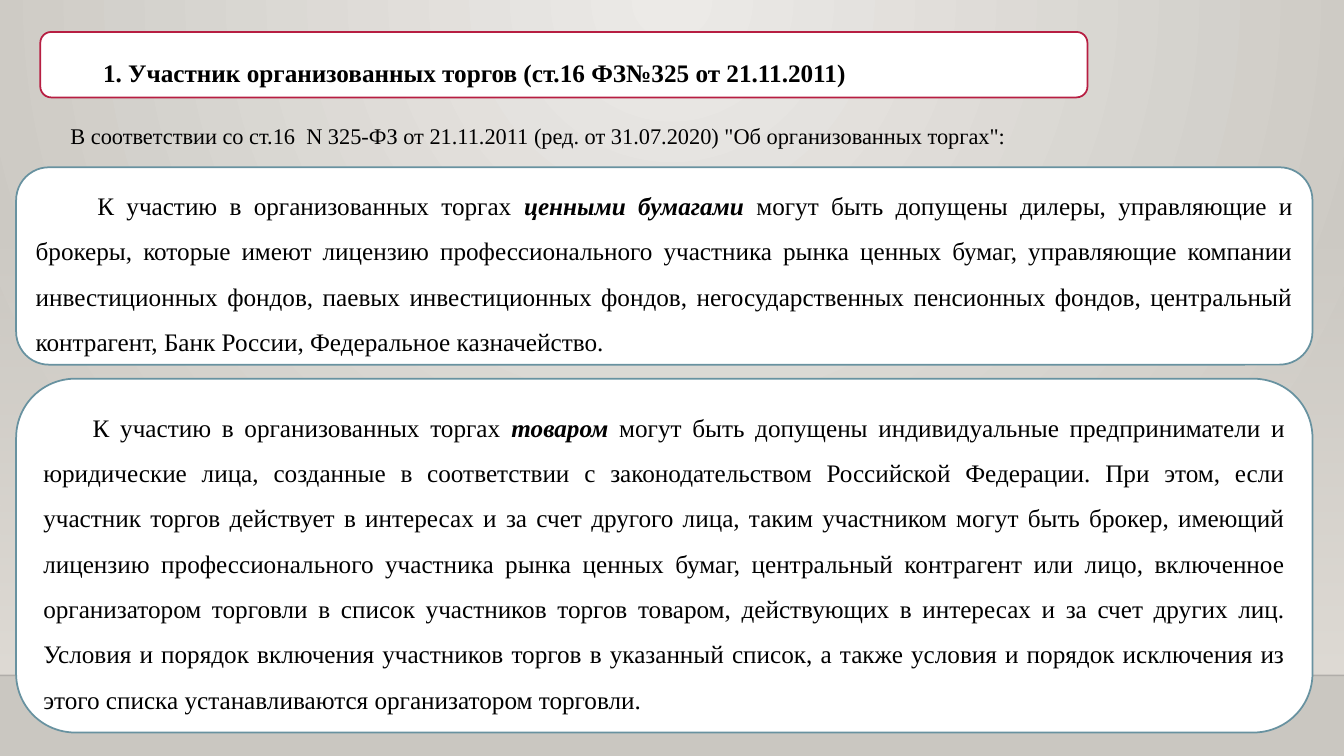
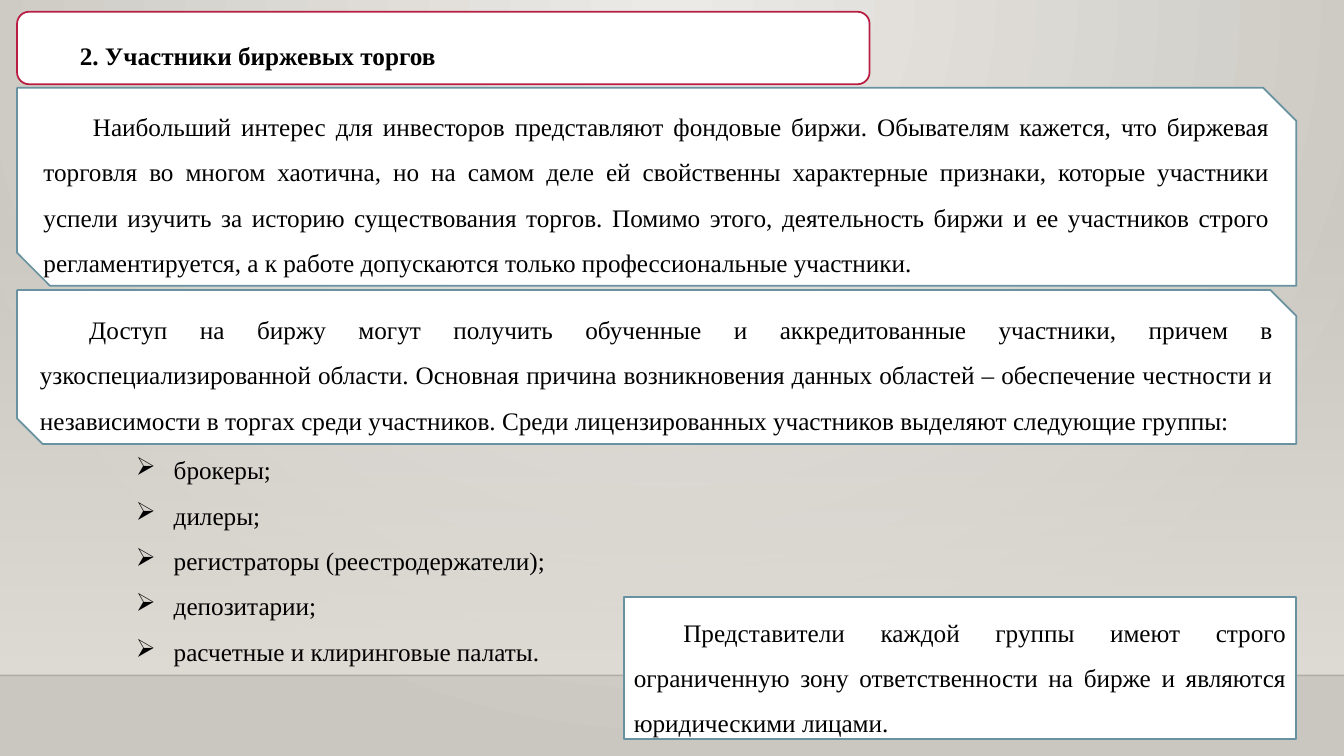
from dataclasses import dataclass

from lxml import etree
from pptx import Presentation
from pptx.dml.color import RGBColor
from pptx.enum import shapes, text
from pptx.oxml import ns, parse_xml
from pptx.util import Pt

COLORS = {
    "text": "000000",
    "white": "FFFFFF",
    "title_line": "B71E42",
    "box_line": "6892A0",
    "bg_light": "ECEAE7",
    "bg_dark": "CAC7C1",
    "band": "DFDBD5",
    "floor_line": "000001",
}
FONT = "Times New Roman"
WIDTH, HEIGHT = 960, 540
BAND_TOP, FLOOR = 159, 482.4
FIRST_INDENT, BULLET_INDENT = 35.3, 27
NSDECLS = ns.nsdecls("a", "p")
KIND = shapes.MSO_SHAPE
ALIGN = text.PP_ALIGN
ANCHOR = text.MSO_ANCHOR


@dataclass(frozen=True)
class Rect:
    left: float
    top: float
    width: float
    height: float

    def points(self) -> list:
        return [Pt(v) for v in (self.left, self.top, self.width, self.height)]


@dataclass(frozen=True)
class Run:
    text: str
    strong: bool = False


@dataclass(frozen=True)
class Box:
    rect: Rect
    kind: KIND
    runs: tuple[Run, ...]
    anchor: ANCHOR = ANCHOR.MIDDLE


@dataclass(frozen=True)
class Title:
    rect: Rect
    text: str
    align: ALIGN


def rgb(name: str) -> RGBColor:
    return RGBColor.from_string(COLORS[name])


def add_run(p, words: str, size: float = 18, bold: bool = False, italic: bool = False) -> None:
    r = p.add_run()
    r.text = words
    r.font.name = FONT
    r.font.size = Pt(size)
    r.font.bold = bold
    r.font.italic = italic
    r.font.color.rgb = rgb("text")


def set_layout(p, align: ALIGN, margin: float, indent: float) -> None:
    p.alignment = align
    p.line_spacing = 1.5
    pPr = p._p.get_or_add_pPr()
    pPr.set("marL", str(Pt(margin)))
    pPr.set("indent", str(Pt(indent)))


def add_panel(s, kind: KIND, rect: Rect, line: str):
    sp = s.shapes.add_shape(kind, *rect.points())
    sp.shadow.inherit = False
    sp.fill.solid()
    sp.fill.fore_color.rgb = rgb("white")
    sp.line.color.rgb = rgb(line)
    sp.line.width = Pt(1.25)
    return sp


def add_title(s, title: Title) -> None:
    add_panel(s, KIND.ROUNDED_RECTANGLE, title.rect, "title_line")
    sp = s.shapes.title
    sp.left, sp.top, sp.width, sp.height = title.rect.points()
    s.shapes.element.append(sp.element)
    tf = sp.text_frame
    tf.auto_size = text.MSO_AUTO_SIZE.NONE
    tf.word_wrap = True
    tf.vertical_anchor = ANCHOR.MIDDLE
    tf.margin_left = tf.margin_right = Pt(9.5)
    p = tf.paragraphs[0]
    set_layout(p, title.align, 0, FIRST_INDENT)
    add_run(p, title.text, bold=True)


def add_box(s, box: Box) -> None:
    tf = add_panel(s, box.kind, box.rect, "box_line").text_frame
    tf.word_wrap = True
    tf.vertical_anchor = box.anchor
    p = tf.paragraphs[0]
    set_layout(p, ALIGN.JUSTIFY, 0, FIRST_INDENT)
    for run in box.runs:
        add_run(p, run.text, bold=run.strong, italic=run.strong)


def add_text_frame(s, rect: Rect):
    tf = s.shapes.add_textbox(*rect.points()).text_frame
    tf.word_wrap = True
    return tf


def add_bullets(s, rect: Rect, items: tuple[str, ...]) -> None:
    tf = add_text_frame(s, rect)
    for i, item in enumerate(items):
        p = tf.add_paragraph() if i else tf.paragraphs[0]
        bullet = etree.SubElement(p._p.get_or_add_pPr(), ns.qn("a:buChar"))
        bullet.set("char", "➢")
        set_layout(p, ALIGN.JUSTIFY, BULLET_INDENT, -BULLET_INDENT)
        add_run(p, item)


def set_alpha(color, percent: int) -> None:
    etree.SubElement(color, ns.qn("a:alpha")).set("val", str(percent * 1000))


def set_background(master) -> None:
    cSld = master.element.cSld
    for old in cSld.findall(ns.qn("p:bg")):
        cSld.remove(old)
    cSld.insert(0, parse_xml(
        f'<p:bg {NSDECLS}><p:bgPr><a:gradFill rotWithShape="1"><a:gsLst>'
        f'<a:gs pos="0"><a:srgbClr val="{COLORS["bg_light"]}"/></a:gs>'
        f'<a:gs pos="100000"><a:srgbClr val="{COLORS["bg_dark"]}"/></a:gs>'
        '</a:gsLst><a:path path="circle">'
        '<a:fillToRect l="43000" t="0" r="43000" b="100000"/></a:path>'
        '</a:gradFill><a:effectLst/></p:bgPr></p:bg>'))


def add_backdrop(master, s) -> None:
    set_background(master)
    band = s.shapes.add_shape(
        KIND.RECTANGLE, *Rect(0, BAND_TOP, WIDTH, FLOOR - BAND_TOP).points())
    band.shadow.inherit = False
    band.line.fill.background()
    band.fill.gradient()
    band.fill.gradient_angle = 270
    for stop, position in zip(band.fill.gradient_stops, (0, 1)):
        stop.color.rgb = rgb("band")
        stop.position = position
    first_color = band.element.spPr.find(".//" + ns.qn("a:srgbClr"))
    set_alpha(first_color, 0)

    floor = s.shapes.add_connector(
        shapes.MSO_CONNECTOR.STRAIGHT, Pt(0), Pt(FLOOR), Pt(WIDTH), Pt(FLOOR))
    floor.line.color.rgb = rgb("floor_line")
    floor.line.width = Pt(1)
    spPr = floor.element.spPr
    set_alpha(spPr.find(".//" + ns.qn("a:srgbClr")), 20)
    etree.SubElement(spPr, ns.qn("a:effectLst"))

    for i, sp in enumerate((band, floor)):
        sp.element.find(".//" + ns.qn("p:cNvPr")).set("id", str(101 + i))
        master.shapes.element.insert(2 + i, sp.element)


def add_members_slide(s) -> None:
    add_title(s, Title(
        Rect(28.8, 22.8, 748, 46.8),
        "1. Участник организованных торгов (ст.16 ФЗ№325 от 21.11.2011)",
        ALIGN.JUSTIFY))
    p = add_text_frame(s, Rect(43.2, 83.5, 815, 26.6)).paragraphs[0]
    add_run(p, "В соответствии со ст.16  N 325-ФЗ от 21.11.2011 (ред. от 31.07.2020) "
               "\"Об организованных торгах\":", size=16)
    add_box(s, Box(Rect(11.5, 119.5, 926, 141), KIND.ROUNDED_RECTANGLE, (
        Run(" К участию в организованных торгах "),
        Run("ценными бумагами ", strong=True),
        Run("могут быть допущены дилеры, управляющие и брокеры, которые имеют лицензию "
            "профессионального участника рынка ценных бумаг, управляющие компании "
            "инвестиционных фондов, паевых инвестиционных фондов, негосударственных "
            "пенсионных фондов, центральный контрагент, Банк России, Федеральное "
            "казначейство."))))
    add_box(s, Box(Rect(11.5, 270.5, 926, 252.7), KIND.ROUNDED_RECTANGLE, (
        Run("К участию в организованных торгах "),
        Run("товаром", strong=True),
        Run(" могут быть допущены индивидуальные предприниматели и юридические лица, "
            "созданные в соответствии с законодательством Российской Федерации. При этом, "
            "если участник торгов действует в интересах и за счет другого лица, таким "
            "участником могут быть брокер, имеющий лицензию профессионального участника "
            "рынка ценных бумаг, центральный контрагент или лицо, включенное организатором "
            "торговли в список участников торгов товаром, действующих в интересах и за счет "
            "других лиц. Условия и порядок включения участников торгов в указанный список, "
            "а также условия и порядок исключения из этого списка устанавливаются "
            "организатором торговли."))))


def add_exchange_slide(s) -> None:
    add_title(s, Title(
        Rect(12.2, 8.4, 609, 51.8), "2. Участники биржевых торгов", ALIGN.LEFT))
    add_box(s, Box(Rect(12.2, 62.8, 913.7, 141.4), KIND.SNIP_2_DIAG_RECTANGLE, (
        Run("Наибольший интерес для инвесторов представляют фондовые биржи. Обывателям "
            "кажется, что биржевая торговля во многом хаотична, но на самом деле ей "
            "свойственны характерные признаки, которые участники успели изучить за историю "
            "существования торгов. Помимо этого, деятельность биржи и ее участников строго "
            "регламентируется, а к работе допускаются только профессиональные участники."),)))
    add_box(s, Box(Rect(12.2, 207.2, 913.7, 110), KIND.SNIP_2_DIAG_RECTANGLE, (
        Run("Доступ на биржу могут получить обученные и аккредитованные участники, причем в "
            "узкоспециализированной области. Основная причина возникновения данных областей "
            "– обеспечение честности и независимости в торгах среди участников. Среди "
            "лицензированных участников выделяют следующие группы:"),)))
    add_bullets(s, Rect(90, 310.3, 480, 167), (
        "брокеры;",
        "дилеры;",
        "регистраторы (реестродержатели);",
        "депозитарии;",
        "расчетные и клиринговые палаты."))
    add_box(s, Box(Rect(445.7, 426.4, 480.2, 101.5), KIND.RECTANGLE, (
        Run("Представители каждой группы имеют строго ограниченную зону ответственности на "
            "бирже и являются юридическими лицами."),), ANCHOR.TOP))


def main() -> None:
    prs = Presentation()
    prs.slide_width, prs.slide_height = Pt(WIDTH), Pt(HEIGHT)
    title_only = prs.slide_layouts.get_by_name("Title Only")
    members, exchange = (prs.slides.add_slide(title_only) for _ in range(2))
    add_backdrop(prs.slide_master, members)
    add_members_slide(members)
    add_exchange_slide(exchange)
    prs.save("out.pptx")


if __name__ == "__main__":
    main()
